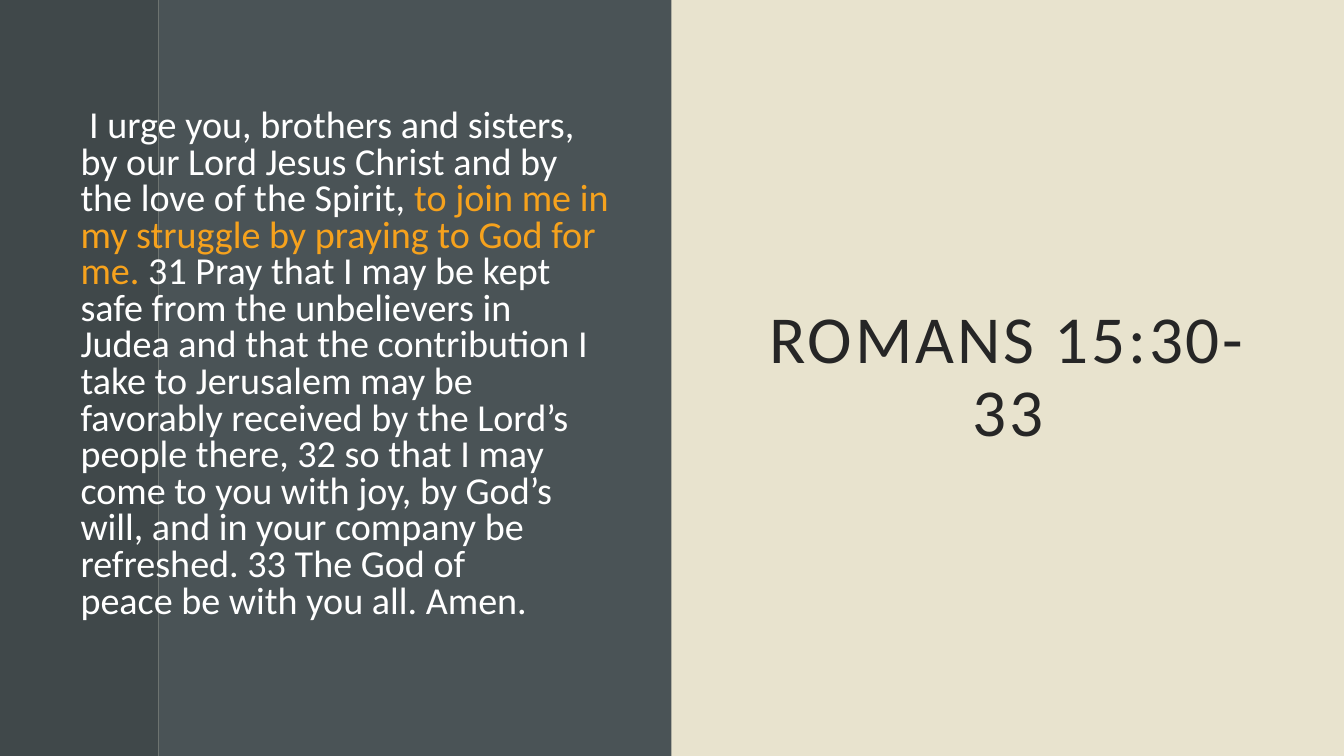
from lxml.etree import SubElement
from pptx import Presentation
from pptx.dml.color import RGBColor
from pptx.enum.shapes import MSO_SHAPE as Shape
from pptx.enum.text import MSO_ANCHOR as Anchor, PP_ALIGN as Align
from pptx.oxml.ns import qn
from pptx.util import Inches, Pt

SLATE = RGBColor(0x4A, 0x53, 0x56)
SHADE = RGBColor(0x38, 0x3E, 0x40)
CREAM = RGBColor(0xE8, 0xE3, 0xCE)
INK = RGBColor(0x26, 0x26, 0x26)
WHITE = RGBColor(0xFF, 0xFF, 0xFF)
AMBER = RGBColor(0xF6, 0xA2, 0x1D)

BAND = 1.57
GLUE = chr(160)
VERSE = [
    ("~I urge you, brothers and sisters, by our Lord Jesus Christ and by "
     "the love of the Spirit,~", WHITE),
    ("to join me in my struggle by praying to God for me.~", AMBER),
    ("31~Pray that I may be kept safe~from the unbelievers in Judea~and that "
     "the contribution~I take to Jerusalem may be favorably received by the "
     "Lord’s people~there,~32~so that I may come to you~with joy, by God’s "
     "will,~and in your company be refreshed.~33~The God of "
     "peace~be with you all. Amen.", WHITE),
]


def add_panel(slide, left, width, color):
    panel = slide.shapes.add_shape(
        Shape.RECTANGLE, Inches(left), 0, Inches(width), Inches(7.5))
    panel.shadow.inherit = False
    panel.fill.solid()
    panel.fill.fore_color.rgb = color
    panel.line.fill.background()
    return panel


def set_alpha(panel, share):
    tint = panel.fill._xPr.find(qn("a:solidFill"))[0]
    SubElement(tint, qn("a:alpha")).set("val", str(share * 1000))


def add_text(slide, box, parts, size, leading):
    frame = slide.shapes.add_textbox(*map(Inches, box)).text_frame
    frame.word_wrap = True
    frame.vertical_anchor = Anchor.MIDDLE
    para = frame.paragraphs[0]
    para.line_spacing = leading
    para.font.name = "Calibri"
    para.font.size = Pt(size)
    for words, color in parts:
        run = para.add_run()
        run.text = words.replace("~", GLUE)
        run.font.color.rgb = color
    return frame


def add_title(slide):
    frame = add_text(slide, (7.37, 1.16, 5.26, 5.18),
                     [("ROMANS 15:30-33", INK)], 48, 0.9)
    frame.margin_left = frame.margin_right = Inches(0.2)
    frame.margin_top = frame.margin_bottom = Inches(0.2)
    para = frame.paragraphs[0]
    para.alignment = Align.CENTER
    para.runs[0].font._element.set("spc", "200")


def add_verse(slide):
    frame = add_text(slide, (0.7, 0.8, 5.45, 5.9), VERSE, 27.2, 0.8)
    frame.margin_bottom = Inches(0.3)


def main():
    deck = Presentation()
    deck.slide_width = Inches(13.33)
    deck.slide_height = Inches(7.5)
    slide = deck.slides.add_slide(deck.slide_layouts[6])
    slide.background.fill.solid()
    slide.background.fill.fore_color.rgb = SLATE
    set_alpha(add_panel(slide, 0, BAND, SHADE), 50)
    add_panel(slide, BAND, 13.33 - BAND, CREAM)
    add_title(slide)
    add_panel(slide, BAND, 5.09, SLATE)
    add_verse(slide)
    deck.save("out.pptx")


if __name__ == "__main__":
    main()
